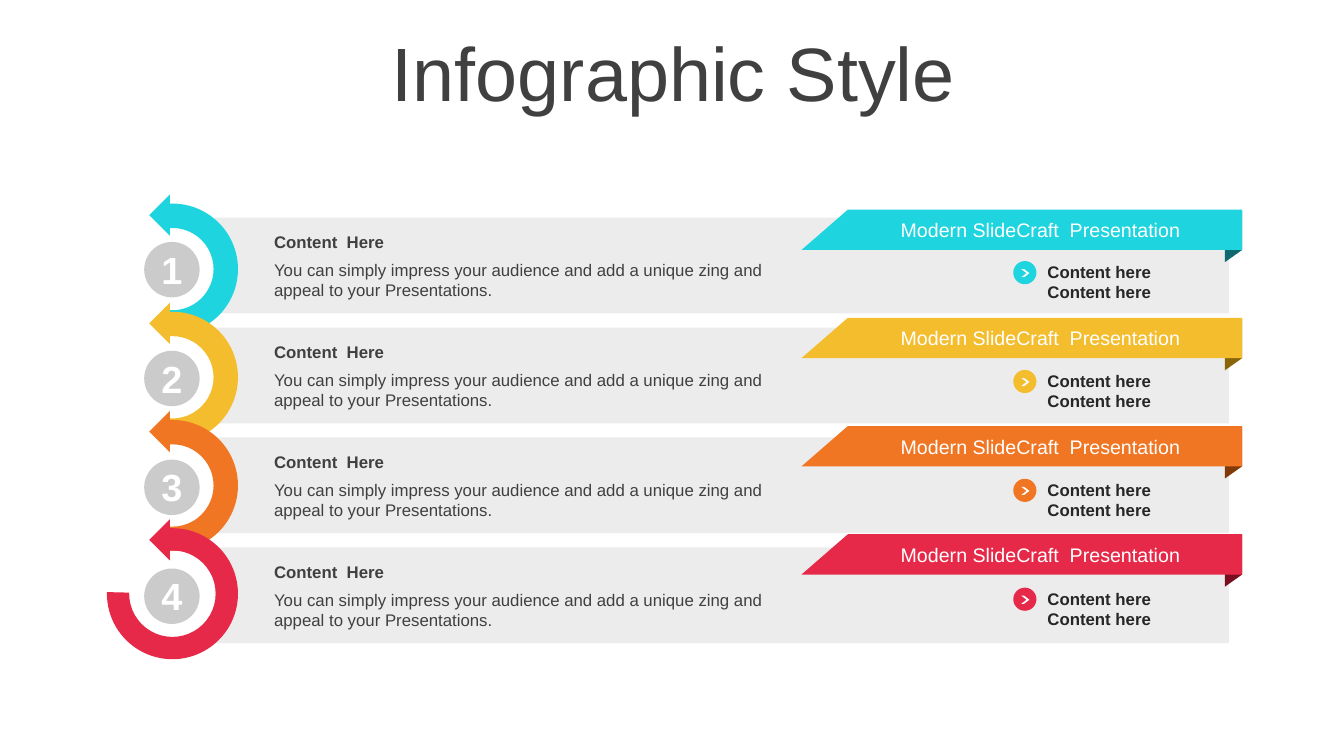
from dataclasses import dataclass

import pptx
import pptx.dml.color
import pptx.enum.shapes
import pptx.enum.text
import pptx.util

Inches = pptx.util.Inches
Shape = pptx.enum.shapes.MSO_SHAPE
Anchor = pptx.enum.text.MSO_ANCHOR
Align = pptx.enum.text.PP_ALIGN
Box = tuple[float, float, float, float]


@dataclass(frozen=True)
class Theme:
    font: str = "Arial"
    white: str = "FFFFFF"
    body: str = "404040"
    strong: str = "262626"
    bar: str = "ECECEC"
    badge: str = "CBCBCB"
    title_size: int = 54
    number_size: int = 27
    ribbon_size: int = 14
    body_size: int = 12


@dataclass(frozen=True)
class Step:
    index: int
    color: str
    fold_color: str
    arc_end: float = 2.031
    arc_thickness: float = 0.186

    def top(self, first: float, last: float) -> float:
        return first + self.index * (last - first) / 3


THEME = Theme()
STEPS = [
    Step(0, "1ED4DE", "0F6A6F"),
    Step(1, "F4BD2D", "896507"),
    Step(2, "F07624", "813909"),
    Step(3, "E62949", "790E20", 54.833, 0.17),
]
HEADING = "Content  Here"
DETAIL = ("You can simply impress your audience and add a unique zing "
          "and appeal to your Presentations.")
RIBBON = "Modern SlideCraft  Presentation"
POINTS = "Content here\nContent here"


def paint(shape, color: str) -> None:
    shape.shadow.inherit = False
    shape.fill.solid()
    shape.fill.fore_color.rgb = pptx.dml.color.RGBColor.from_string(color)
    shape.line.fill.background()


def add_preset(slide, kind, box: Box, color: str, rotation: float = 0,
               adjustments: tuple[float, ...] = ()) -> None:
    shape = slide.shapes.add_shape(kind, *map(Inches, box))
    paint(shape, color)
    shape.rotation = rotation
    for position, value in enumerate(adjustments):
        shape.adjustments[position] = value


def add_outline(slide, points: list[tuple[float, float]], color: str) -> None:
    corners = [(Inches(x), Inches(y)) for x, y in points]
    builder = slide.shapes.build_freeform(*corners[0])
    builder.add_line_segments(corners[1:], close=True)
    paint(builder.convert_to_shape(), color)


def add_text(slide, text: str, box: Box, *, size: int, color: str,
             bold: bool = False, align=Align.LEFT, anchor=Anchor.TOP,
             line_spacing: float = 1.0) -> None:
    frame = slide.shapes.add_textbox(*map(Inches, box)).text_frame
    frame.word_wrap = True
    frame.vertical_anchor = anchor
    frame.text = text
    for paragraph in frame.paragraphs:
        paragraph.alignment = align
        paragraph.line_spacing = line_spacing
        for run in paragraph.runs:
            run.font.name = THEME.font
            run.font.size = pptx.util.Pt(size)
            run.font.bold = bold
            run.font.color.rgb = pptx.dml.color.RGBColor.from_string(color)


def draw_bar(slide, step: Step) -> None:
    add_preset(slide, Shape.RECTANGLE,
               (2.13, step.top(2.16, 5.43), 10.06, 0.95), THEME.bar)


def draw_badge(slide, step: Step) -> None:
    top = step.top(2.4, 5.64)
    add_preset(slide, Shape.OVAL, (1.43, top, 0.55, 0.55), THEME.badge)
    add_text(slide, str(step.index + 1), (1.48, top - 0.01, 0.45, 0.56),
             size=THEME.number_size, color=THEME.white, bold=True,
             align=Align.CENTER, anchor=Anchor.MIDDLE)


def draw_arrow(slide, step: Step) -> None:
    top = step.top(2.02, 5.24)
    add_preset(slide, Shape.BLOCK_ARC, (1.06, top, 1.3, 1.3), step.color, 90,
               (104.732, step.arc_end, step.arc_thickness))
    add_preset(slide, Shape.RIGHT_TRIANGLE, (1.54, top - 0.03, 0.29, 0.29),
               step.color, 45)


def draw_description(slide, step: Step) -> None:
    top = step.top(2.25, 5.52)
    add_text(slide, DETAIL, (2.62, top + 0.28, 5.25, 0.5),
             size=THEME.body_size, color=THEME.body)
    add_text(slide, HEADING, (2.62, top, 5.33, 0.3),
             size=THEME.body_size, color=THEME.body, bold=True)


def draw_ribbon(slide, step: Step) -> None:
    top = step.top(2.08, 5.3)
    bottom = top + 0.4
    add_outline(slide, [(12.15, top + 0.02), (12.32, top + 0.01),
                        (12.32, bottom), (12.15, top + 0.52)], step.fold_color)
    add_outline(slide, [(12.32, top), (8.41, top), (7.95, bottom),
                        (12.32, bottom)], step.color)
    add_text(slide, RIBBON, (8.73, top + 0.03, 3.18, 0.34),
             size=THEME.ribbon_size, color=THEME.white,
             align=Align.CENTER, anchor=Anchor.MIDDLE)


def draw_points(slide, step: Step) -> None:
    top = step.top(2.59, 5.83)
    add_preset(slide, Shape.OVAL, (10.05, top, 0.23, 0.23), step.color)
    add_preset(slide, Shape.CHEVRON, (10.13, top + 0.08, 0.08, 0.08),
               THEME.white, adjustments=(0.652,))
    add_text(slide, POINTS, (10.29, top - 0.04, 1.38, 0.5),
             size=THEME.body_size, color=THEME.strong, bold=True,
             anchor=Anchor.MIDDLE)


def main() -> None:
    deck = pptx.Presentation()
    deck.slide_width = Inches(13.33)
    deck.slide_height = Inches(7.5)
    slide = deck.slides.add_slide(deck.slide_layouts[6])
    add_text(slide, "Infographic Style", (0.35, 0.37, 12.66, 0.79),
             size=THEME.title_size, color=THEME.body, align=Align.CENTER,
             anchor=Anchor.MIDDLE, line_spacing=0.9)
    for draw_layer in (draw_bar, draw_badge, draw_arrow, draw_description,
                       draw_ribbon, draw_points):
        for step in STEPS:
            draw_layer(slide, step)
    deck.save("out.pptx")


if __name__ == "__main__":
    main()
